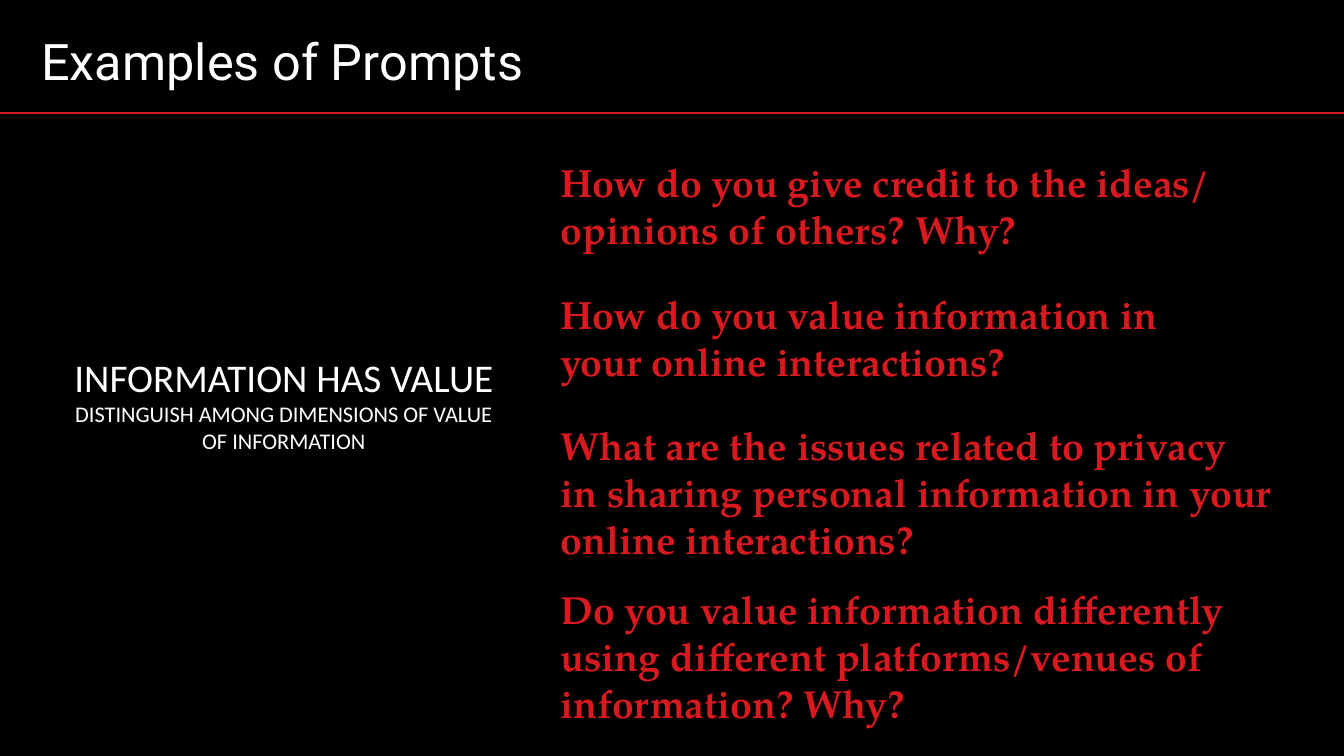
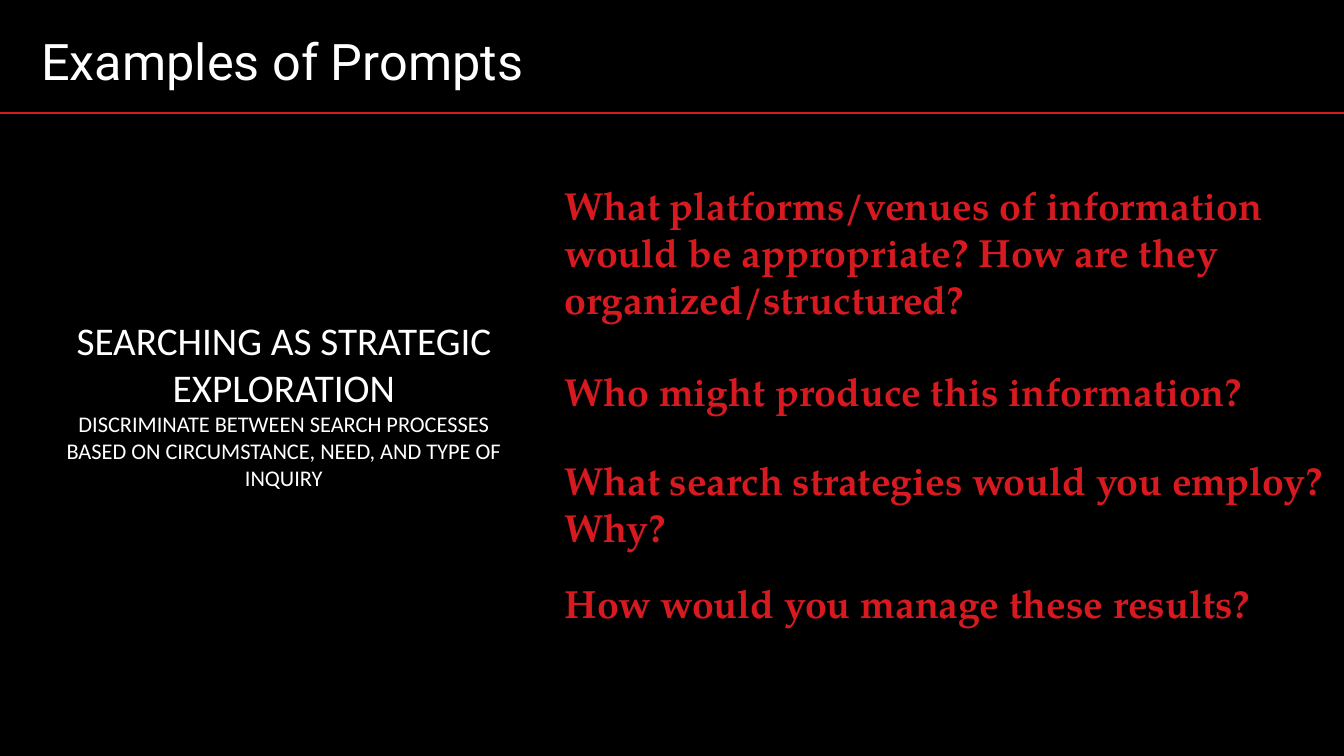
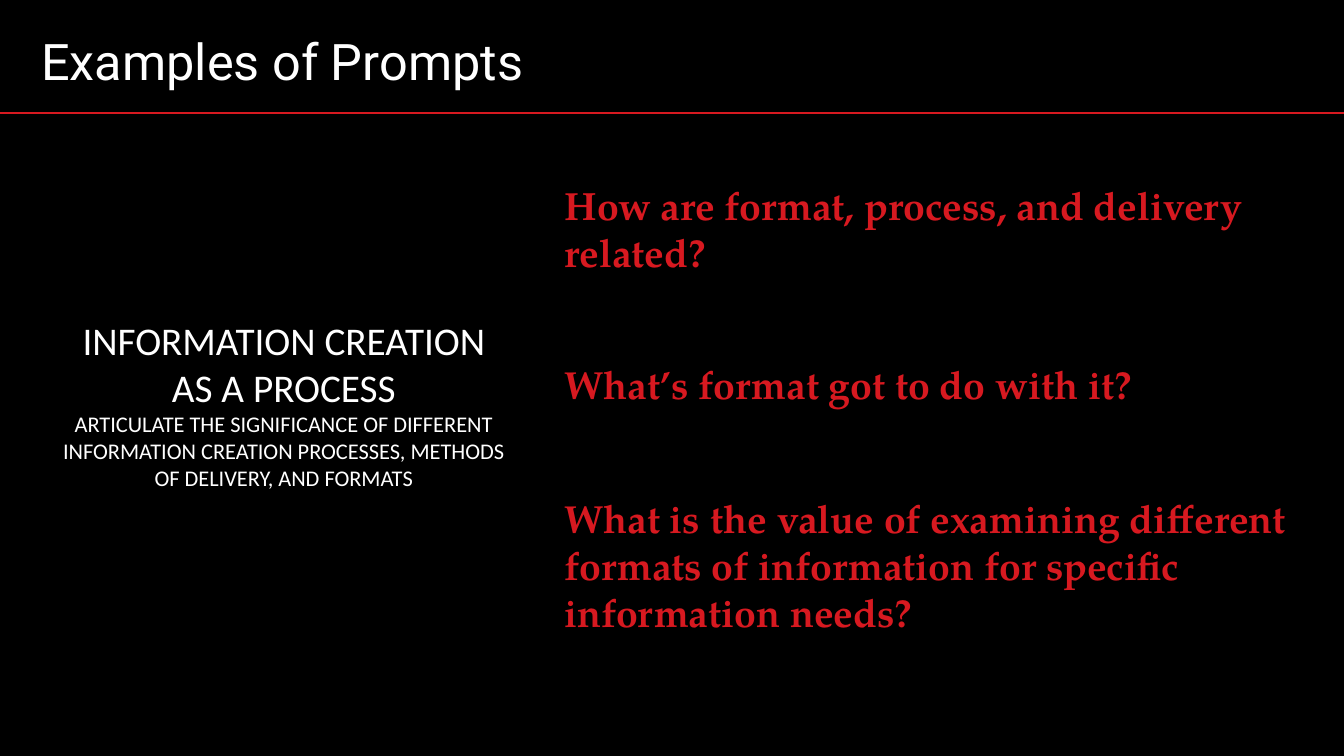
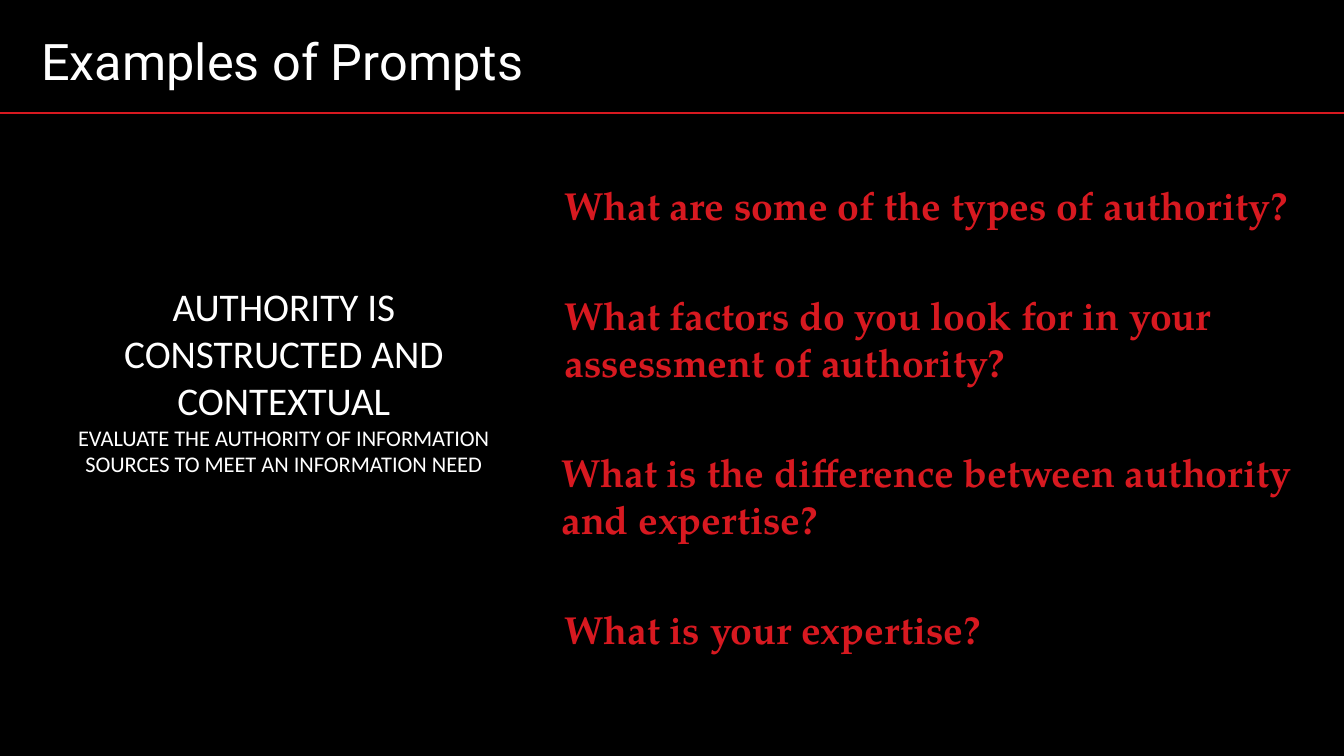
import pptx
import pptx.util
import pptx.dml.color
import pptx.enum.shapes
import pptx.enum.text
import pptx.oxml

Inches, Pt = pptx.util.Inches, pptx.util.Pt
ALIGN = pptx.enum.text.PP_ALIGN
ANCHOR = pptx.enum.text.MSO_ANCHOR
AUTO_SIZE = pptx.enum.text.MSO_AUTO_SIZE

BLACK, WHITE, RED = "000000", "FFFFFF", "D71920"
TITLE = "Examples of Prompts"
SLIDE_WIDTH, SLIDE_HEIGHT = 13.33, 7.5
RULE_TOP = 1.12
LINE_HEIGHT, PROMPT_PADDING = 0.47, 0.1

# Each prompt: left, top, width (inches), lines
SLIDES = [
    {
        "frame": "INFORMATION HAS VALUE",
        "goal": "DISTINGUISH AMONG DIMENSIONS OF VALUE OF INFORMATION",
        "prompts": [
            (5.46, 1.52, 6.76, ["How do you give credit to the ideas/",
                                "opinions of others? Why?"]),
            (5.46, 2.83, 6.36, ["How do you value information in",
                                "your online interactions?"]),
            (5.46, 4.13, 7.33, ["What are the issues related to privacy",
                                "in sharing personal information in your",
                                "online interactions?"]),
            (5.46, 5.76, 6.91, ["Do you value information differently",
                                "using different platforms/venues of",
                                "information? Why?"]),
        ],
    },
    {
        "frame": "SEARCHING AS STRATEGIC EXPLORATION",
        "goal": "DISCRIMINATE BETWEEN SEARCH PROCESSES BASED ON "
                "CIRCUMSTANCE, NEED, AND TYPE OF INQUIRY",
        "prompts": [
            (5.5, 1.75, 7.12, ["What platforms/venues of information",
                               "would be appropriate? How are they",
                               "organized/structured?"]),
            (5.5, 3.59, 6.99, ["Who might produce this information?"]),
            (5.5, 4.48, 7.85, ["What search strategies would you employ?",
                               "Why?"]),
            (5.5, 5.7, 7.11, ["How would you manage these results?"]),
        ],
    },
    {
        "frame": "INFORMATION CREATION AS A PROCESS",
        "goal": "ARTICULATE THE SIGNIFICANCE OF DIFFERENT INFORMATION "
                "CREATION PROCESSES, METHODS OF DELIVERY, AND FORMATS",
        "prompts": [
            (5.5, 1.75, 7, ["How are format, process, and delivery",
                            "related?"]),
            (5.5, 3.53, 5.88, ["What’s format got to do with it?"]),
            (5.5, 4.85, 7.57, ["What is the value of examining different",
                               "formats of information for specific",
                               "information needs?"]),
        ],
    },
    {
        "frame": "AUTHORITY IS CONSTRUCTED AND CONTEXTUAL",
        "goal": "EVALUATE THE AUTHORITY OF INFORMATION SOURCES TO MEET "
                "AN INFORMATION NEED",
        "bottom_margin": 0.52,
        "prompts": [
            (5.5, 1.75, 7.44, ["What are some of the types of authority?"]),
            (5.5, 2.84, 6.82, ["What factors do you look for in your",
                               "assessment of authority?"]),
            (5.47, 4.4, 7.55, ["What is the difference between authority",
                               "and expertise?"]),
            (5.5, 5.96, 4.38, ["What is your expertise?"]),
        ],
    },
]


def rgb(color):
    return pptx.dml.color.RGBColor.from_string(color)


def write(para, text, *, size, font, color, bold=False, align=ALIGN.LEFT):
    para.alignment = align
    span = para.add_run()
    span.text = text
    span.font.size = Pt(size)
    span.font.name = font
    span.font.bold = bold
    span.font.color.rgb = rgb(color)


def write_lines(frame, lines, **style):
    """Fill a frame that grows with its text, one paragraph a line."""
    frame.word_wrap = False
    frame.auto_size = AUTO_SIZE.SHAPE_TO_FIT_TEXT
    frame.vertical_anchor = ANCHOR.TOP
    for index, line in enumerate(lines):
        para = frame.add_paragraph() if index else frame.paragraphs[0]
        write(para, line, **style)


def add_header(page):
    rule = page.shapes.add_connector(
        pptx.enum.shapes.MSO_CONNECTOR.STRAIGHT,
        Inches(0), Inches(RULE_TOP), Inches(SLIDE_WIDTH), Inches(RULE_TOP))
    rule.line.color.rgb = rgb(RED)
    rule.line.width = Pt(1.5)
    rule._element.spPr.append(pptx.oxml.parse_xml(
        '<a:effectLst xmlns:a='
        '"http://schemas.openxmlformats.org/drawingml/2006/main"/>'))
    title = page.shapes.title
    title.left, title.top = Inches(0.31), Inches(0.25)
    title.width, title.height = Inches(5), Inches(0.71)
    write_lines(title.text_frame, [TITLE], size=36, font="Roboto", color=WHITE)


def add_panel(page, heading, goal, bottom_margin):
    panel = page.shapes.add_shape(
        pptx.enum.shapes.MSO_SHAPE.RECTANGLE,
        Inches(0.51), Inches(1.52), Inches(4.61), Inches(4.97))
    panel.shadow.inherit = False
    panel.fill.solid()
    panel.fill.fore_color.rgb = rgb(BLACK)
    panel.line.color.rgb = rgb(BLACK)
    panel.line.width = Pt(1)
    frame = panel.text_frame
    frame.word_wrap = True
    frame.vertical_anchor = ANCHOR.MIDDLE
    frame.margin_bottom = Inches(bottom_margin)
    style = {"font": "Calibri", "color": WHITE, "align": ALIGN.CENTER}
    write(frame.paragraphs[0], heading, size=28, **style)
    write(frame.add_paragraph(), goal, size=16, **style)


def add_prompt(page, left, top, width, lines):
    height = PROMPT_PADDING + LINE_HEIGHT * len(lines)
    box = page.shapes.add_textbox(
        Inches(left), Inches(top), Inches(width), Inches(height))
    write_lines(box.text_frame, lines, size=28, font="TeX Gyre Pagella",
                color=RED, bold=True)


def main():
    deck = pptx.Presentation()
    deck.slide_width = Inches(SLIDE_WIDTH)
    deck.slide_height = Inches(SLIDE_HEIGHT)
    backdrop = deck.slide_master.background.fill
    backdrop.solid()
    backdrop.fore_color.rgb = rgb(BLACK)
    title_only = deck.slide_layouts.get_by_name("Title Only")
    for content in SLIDES:
        page = deck.slides.add_slide(title_only)
        add_header(page)
        add_panel(page, content["frame"], content["goal"],
                  content.get("bottom_margin", 0.05))
        for prompt in content["prompts"]:
            add_prompt(page, *prompt)
    deck.save("out.pptx")


if __name__ == "__main__":
    main()
